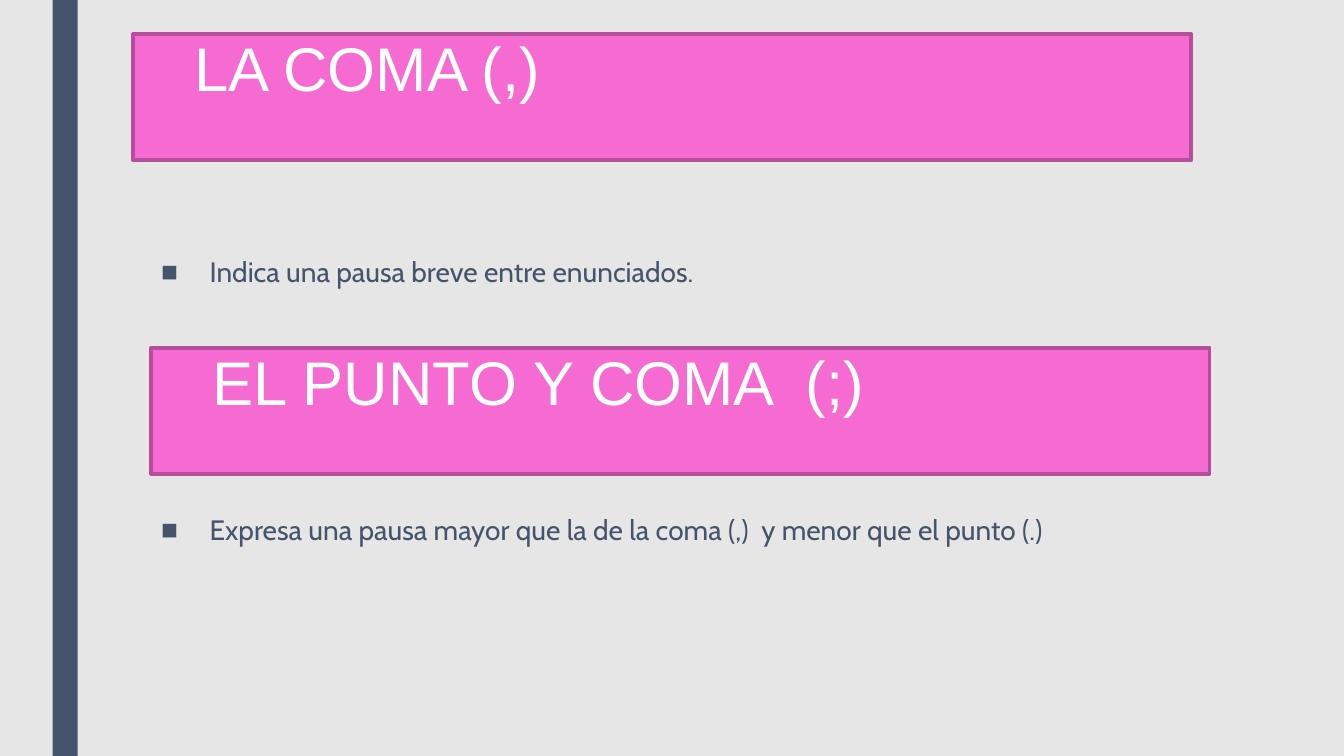
from pptx import Presentation
from pptx.dml.color import RGBColor
from pptx.enum import shapes, text
from pptx.oxml import parse_xml
from pptx.oxml.ns import nsdecls
from pptx.util import Pt

# Content: heading, its left and top, explanation, its top and height
SECTIONS = [
    ("LA COMA (,)", 95, 24.5,
     "Indica una pausa breve entre enunciados.", 180, 282),
    ("EL PUNTO Y COMA  (;)", 108, 248.4,
     "Expresa una pausa mayor que la de la coma (,)  y menor que el punto (.)",
     364.3, 175.7),
]

# Look
GREY = RGBColor(0xE7, 0xE6, 0xE6)
NAVY = RGBColor(0x44, 0x54, 0x6A)
PINK = RGBColor(0xF5, 0x6B, 0xD1)
PLUM = RGBColor(0xB5, 0x4F, 0x9B)
WHITE = RGBColor(0xFF, 0xFF, 0xFF)
PAGE_WIDTH, PAGE_HEIGHT = 960, 540
COLUMN_LEFT, COLUMN_WIDTH = 108, 756
BANNER_HEIGHT = 90
BANNER_INSET = 43.9
BULLET_INDENT = 34.7


def add_rectangle(page, left, top, width, height, fill):
    box = page.shapes.add_shape(shapes.MSO_SHAPE.RECTANGLE,
                                Pt(left), Pt(top), Pt(width), Pt(height))
    box.shadow.inherit = False
    box.fill.solid()
    box.fill.fore_color.rgb = fill
    box.line.fill.background()
    return box


def write(box, words, *, font, size, color, spacing, align,
          inset=7.2, before=0, after=0, bullet=None):
    frame = box.text_frame
    frame.word_wrap = True
    frame.vertical_anchor = text.MSO_ANCHOR.TOP
    frame.margin_left = Pt(inset)
    para = frame.paragraphs[0]
    para.alignment = align
    para.line_spacing = spacing
    para.space_before, para.space_after = Pt(before), Pt(after)
    if bullet:
        properties = para._p.get_or_add_pPr()
        properties.set("marL", str(Pt(BULLET_INDENT)))
        properties.set("indent", str(-Pt(BULLET_INDENT)))
        properties.append(parse_xml(
            f'<a:buFont {nsdecls("a")} typeface="Arial"/>'))
        properties.append(parse_xml(
            f'<a:buChar {nsdecls("a")} char="{bullet}"/>'))
    span = para.add_run()
    span.text = words
    span.font.name, span.font.size = font, Pt(size)
    span.font.color.rgb = color


def main():
    deck = Presentation()
    deck.slide_width, deck.slide_height = Pt(PAGE_WIDTH), Pt(PAGE_HEIGHT)
    page = deck.slides.add_slide(deck.slide_layouts[6])
    page.background.fill.solid()
    page.background.fill.fore_color.rgb = GREY

    # Side stripe
    add_rectangle(page, 37.5, 0, 18, PAGE_HEIGHT, NAVY)

    # Banners with their explanations
    for heading, left, top, note, note_top, note_height in SECTIONS:
        banner = add_rectangle(page, left, top, COLUMN_WIDTH, BANNER_HEIGHT, PINK)
        banner.line.color.rgb = PLUM
        banner.line.width = Pt(2.75)
        write(banner, heading, font="Arial", size=44, color=WHITE, spacing=0.89,
              align=text.PP_ALIGN.JUSTIFY, inset=BANNER_INSET)

        box = page.shapes.add_textbox(Pt(COLUMN_LEFT), Pt(note_top),
                                      Pt(COLUMN_WIDTH), Pt(note_height))
        write(box, note, font="Cabin", size=20, color=NAVY, spacing=0.94,
              align=text.PP_ALIGN.LEFT, before=10, after=2, bullet="■")

    deck.save("out.pptx")


if __name__ == "__main__":
    main()
